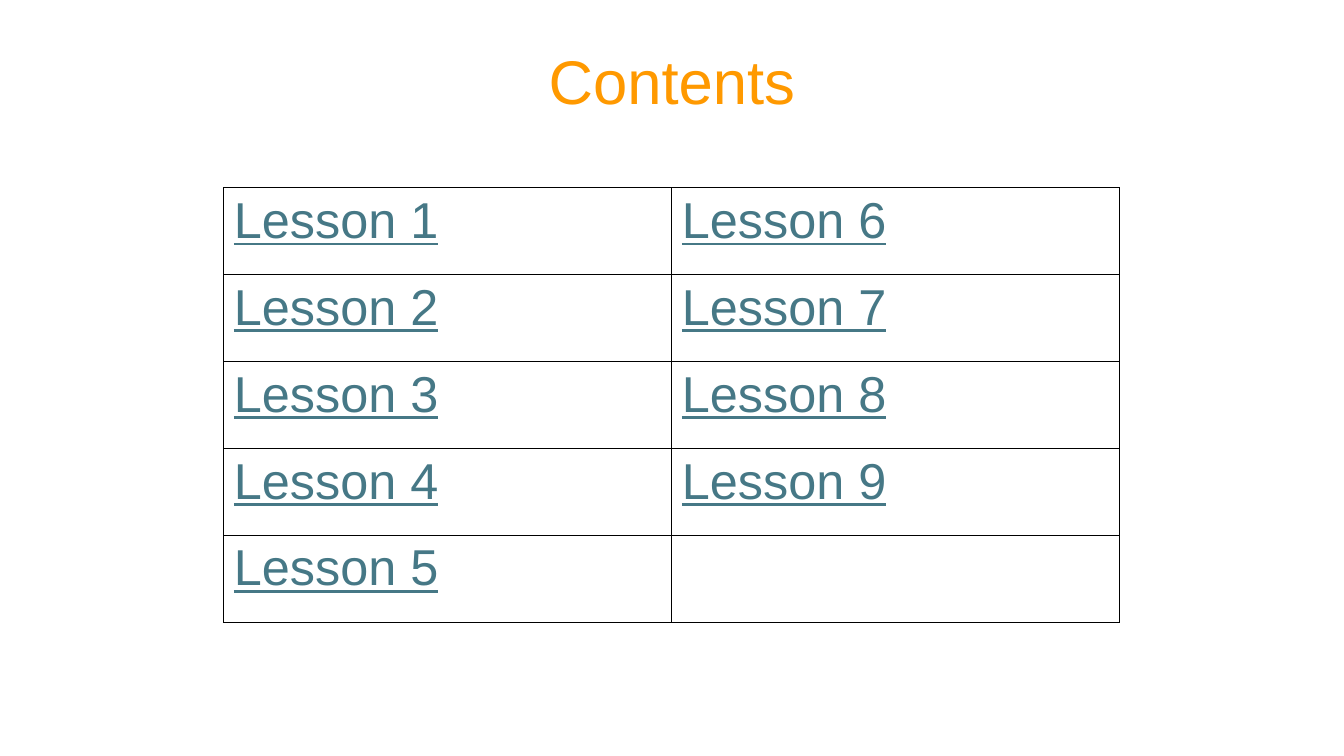
"""Build a contents slide with a two-column table of lessons."""
from lxml import etree
from pptx import Presentation
from pptx.dml.color import RGBColor
from pptx.enum.text import MSO_ANCHOR, PP_ALIGN
from pptx.oxml.ns import qn
from pptx.util import Cm, Pt

MIDDLE = MSO_ANCHOR.MIDDLE
CENTER = PP_ALIGN.CENTER
COLORS = {"title": "FF9900", "lesson": "467886", "border": "000000"}
FONT = "Arial"
ROWS, COLUMNS, LESSONS = 5, 2, 9


def style_font(font, size, color):
    font.name = FONT
    font.size = Pt(size)
    font.color.rgb = RGBColor.from_string(COLORS[color])


def add_borders(cell):
    properties = cell._tc.get_or_add_tcPr()
    for side in ("lnL", "lnR", "lnT", "lnB"):
        line = etree.SubElement(properties, qn(f"a:{side}"), w=str(Pt(1)))
        fill = etree.SubElement(line, qn("a:solidFill"))
        etree.SubElement(fill, qn("a:srgbClr"), val=COLORS["border"])


presentation = Presentation()
presentation.slide_width = Cm(33.87)
presentation.slide_height = Cm(19.05)
slide = presentation.slides.add_slide(presentation.slide_layouts[5])

title = slide.shapes.title
title.left, title.top = Cm(2.33), Cm(0.28)
title.width, title.height = Cm(29.21), Cm(3.68)
title.text_frame.text = "Contents"
title.text_frame.vertical_anchor = MIDDLE
paragraph = title.text_frame.paragraphs[0]
paragraph.alignment = CENTER
paragraph.line_spacing = 0.9
style_font(paragraph.font, 44, "title")

table = slide.shapes.add_table(
    ROWS, COLUMNS, Cm(5.64), Cm(4.73), Cm(22.58), Cm(10.95)
).table
table.first_row = False
table.horz_banding = False

for column in range(COLUMNS):
    for row in range(ROWS):
        cell = table.cell(row, column)
        add_borders(cell)
        cell.fill.background()
        paragraph = cell.text_frame.paragraphs[0]
        style_font(paragraph.font, 36, "lesson")
        paragraph.font.underline = True
        number = column * ROWS + row + 1
        if number <= LESSONS:
            paragraph.text = f"Lesson {number}"

presentation.save("out.pptx")
